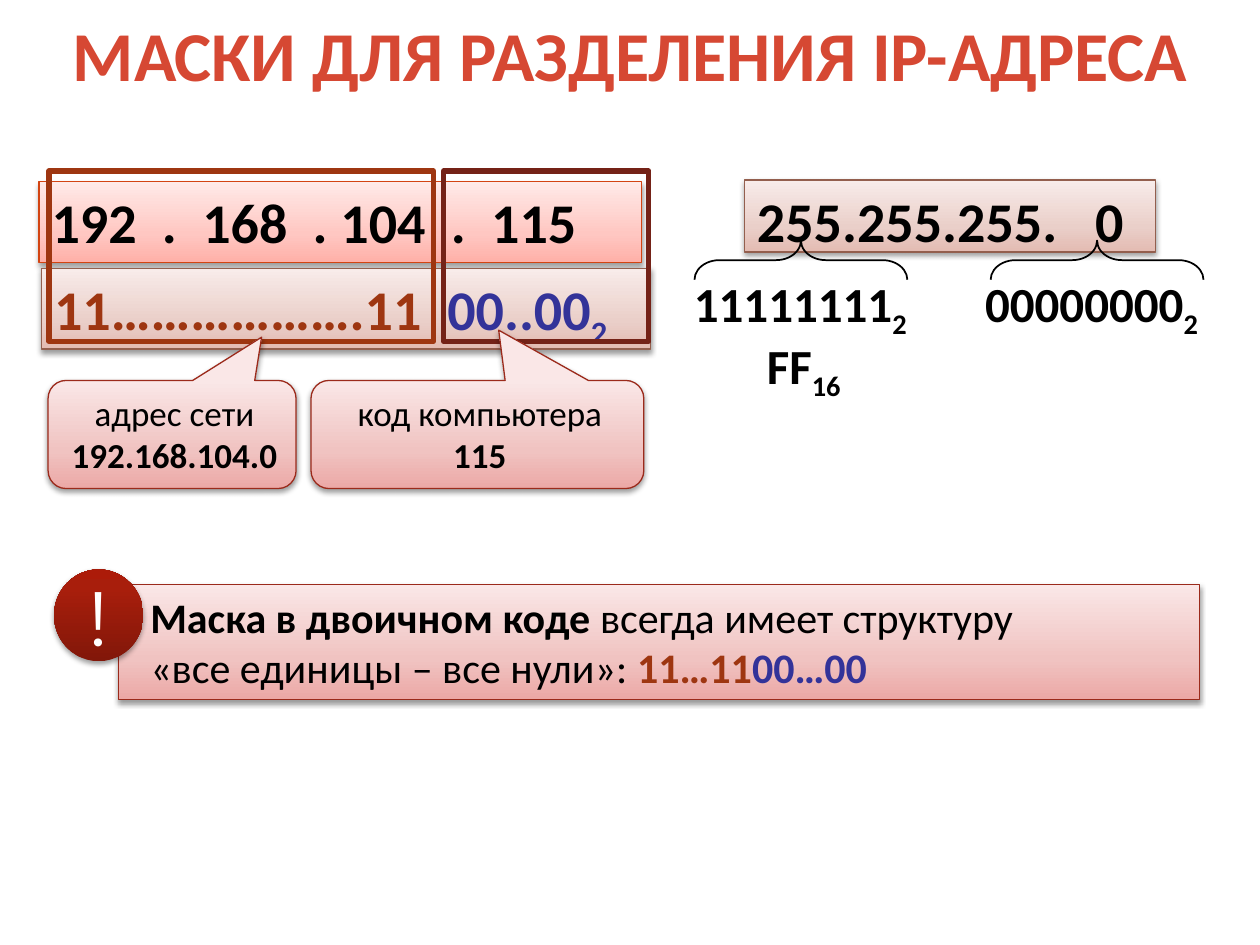
import lxml.etree
import pptx
import pptx.dml.color
import pptx.enum.shapes
import pptx.enum.text
import pptx.oxml.ns
import pptx.util
from pptx.util import Cm

KIND = pptx.enum.shapes.MSO_SHAPE
ALIGN = pptx.enum.text.PP_ALIGN
ANCHOR = pptx.enum.text.MSO_ANCHOR

THEME = {
    "font": "Calibri", "icon_font": "Montserrat",
    "title": 40, "number": 32, "binary": 28, "note": 24, "label": 20, "icon": 44,
    "heading": "D64833", "text": "000000", "light": "FFFFFF",
    "network": "9E3611", "host": "333399", "host_frame": "742217",
}
# Gradient stops run from bottom to top
PANELS = {
    "address": {"stops": [(0, "FFB0A8"), (35, "FFC7C2"), (100, "FFEAE8")], "line": "D34412"},
    "mask": {"stops": [(0, "E3BBB2"), (35, "EACFC9"), (100, "F8ECEA")], "line": "935F4E"},
    "note": {"stops": [(0, "ECA8A6"), (35, "F0C3C1"), (100, "FAE7E7")], "line": "9B2A1B"},
    "icon": {"stops": [(0, "821709"), (80, "A81E0C"), (100, "AC1B09")], "line": None},
}

# A span is (text, changes); a paragraph is a list of spans
BOLD = {"bold": True}
SUB = {"bold": True, "sub": True}
NETWORK = {"bold": True, "color": "network"}
HOST = {"bold": True, "color": "host"}

TITLE = "МАСКИ ДЛЯ РАЗДЕЛЕНИЯ IP-АДРЕСА"
ROWS = [  # panel, box in cm, spans
    ("address", (0.79, 3.66, 12.14, 1.63), [("192  .  168  . 104  .  115", BOLD)]),
    ("mask", (15.01, 3.63, 8.28, 1.45), [("255.255.255.   0", BOLD)]),
    ("mask", (0.84, 5.41, 12.27, 1.63),
     [("11……………….11  ", NETWORK), ("00..00", HOST), ("2", {**HOST, "sub": True})]),
]
BINARY = [  # box in cm, digits, base
    ((13.74, 5.38, 5.13, 1.45), "11111111", "2"),
    ((15.21, 6.63, 2.46, 1.45), "FF", "16"),
    ((19.61, 5.38, 5.33, 1.45), "00000000", "2"),
]
BRACE_LEFTS = [15.75, 21.72]
FRAMES = [(0.99, 7.75, "network"), (8.94, 4.14, "host_frame")]  # left, width, colour
CALLOUTS = [  # left, width, pointer, name, value
    (0.97, 5.0, (0.361, -0.9), "адрес сети", "192.168.104.0"),
    (6.27, 6.71, (0.064, -0.965), "код компьютера", "115"),
]
NOTE = [("Маска в двоичном коде ", BOLD), ("всегда имеет структуру", {}), ("\n", {}),
        ("«все единицы – все нули»: ", {}), ("11…11", NETWORK), ("00…00", HOST)]


def rgb(name):
    return pptx.dml.color.RGBColor.from_string(THEME.get(name, name))


def add_xml(parent, tag, **attributes):
    element = lxml.etree.SubElement(parent, pptx.oxml.ns.qn(tag))
    for key, value in attributes.items():
        element.set(key, str(value))
    return element


def write(shape, paragraphs, size, color="text", font="font", align=ALIGN.LEFT, anchor=ANCHOR.TOP):
    frame = shape.text_frame
    frame.word_wrap = True
    frame.vertical_anchor = anchor
    for index, spans in enumerate(paragraphs):
        para = frame.add_paragraph() if index else frame.paragraphs[0]
        para.alignment = align
        for text, changes in spans:
            if text == "\n":
                para.add_line_break()
                continue
            span = para.add_run()
            span.text = text
            span.font.name = THEME[font]
            span.font.size = pptx.util.Pt(THEME[size])
            span.font.bold = changes.get("bold", False)
            span.font.color.rgb = rgb(changes.get("color", color))
            if changes.get("sub"):
                span.font._element.set("baseline", "-25000")
    return frame


def add_outline(page, kind, box, color, width):
    shape = page.shapes.add_shape(kind, *map(Cm, box))
    shape.shadow.inherit = False
    shape.fill.background()
    shape.line.color.rgb = rgb(color)
    shape.line.width = pptx.util.Pt(width)
    return shape


def add_panel(page, kind, box, panel):
    """Add a shape with a vertical gradient and a soft shadow below it."""
    look = PANELS[panel]
    shape = add_outline(page, kind, box, look["line"] or "text", 0.75)
    if not look["line"]:
        shape.line.fill.background()
    shape.fill.gradient()
    shape.fill.gradient_angle = 90
    properties = shape._element.spPr
    stops = properties.find(".//" + pptx.oxml.ns.qn("a:gsLst"))
    for stop in list(stops):
        stops.remove(stop)
    for position, color in look["stops"]:
        add_xml(add_xml(stops, "a:gs", pos=position * 1000), "a:srgbClr", val=color)
    effects = properties.find(pptx.oxml.ns.qn("a:effectLst"))
    shadow = add_xml(effects, "a:outerShdw", blurRad=40000, dist=20000, dir=5400000, rotWithShape=0)
    add_xml(add_xml(shadow, "a:srgbClr", val=THEME["text"]), "a:alpha", val=38000)
    return shape


def add_title(page):
    title = page.shapes.title
    title.left, title.top, title.width, title.height = Cm(0), Cm(0), Cm(25.4), Cm(2.16)
    write(title, [[(TITLE, BOLD)]], "title", "heading", align=ALIGN.CENTER, anchor=ANCHOR.MIDDLE)


def add_masks(page):
    for panel, box, spans in ROWS:
        write(add_panel(page, KIND.RECTANGLE, box, panel), [spans], "number")
    for box, digits, base in BINARY:
        label = page.shapes.add_textbox(*map(Cm, box))
        write(label, [[(digits, BOLD), (base, SUB)]], "binary")
    for left in BRACE_LEFTS:
        brace = add_outline(page, KIND.LEFT_BRACE, (left, 3.1, 0.79, 4.29), "text", 1)
        brace.adjustments[0] = 0.635
        brace.rotation = 90
    for left, width, color in FRAMES:
        add_outline(page, KIND.RECTANGLE, (left, 3.45, width, 3.43), color, 3)


def add_callouts(page):
    for left, width, pointer, name, value in CALLOUTS:
        callout = add_panel(page, KIND.ROUNDED_RECTANGULAR_CALLOUT, (left, 7.67, width, 2.18), "note")
        callout.adjustments[0], callout.adjustments[1] = pointer
        frame = write(callout, [[(name, {})], [(value, BOLD)]], "label", align=ALIGN.CENTER)
        frame.margin_left, frame.margin_right = Cm(0.15), Cm(0.05)


def add_note(page):
    note = add_panel(page, KIND.RECTANGLE, (2.39, 11.79, 21.79, 2.31), "note")
    write(note, [NOTE], "note").margin_left = Cm(0.64)
    icon = add_panel(page, KIND.OVAL, (1.09, 11.48, 1.8, 1.85), "icon")
    write(icon, [[("!", {})]], "icon", "light", "icon_font", ALIGN.CENTER, ANCHOR.MIDDLE)
    page.shapes.add_group_shape([note, icon])


def main():
    deck = pptx.Presentation()
    deck.slide_width, deck.slide_height = Cm(25.4), Cm(19.05)
    page = deck.slides.add_slide(deck.slide_layouts[5])
    add_title(page)
    add_masks(page)
    add_callouts(page)
    add_note(page)
    deck.save("out.pptx")


if __name__ == "__main__":
    main()
